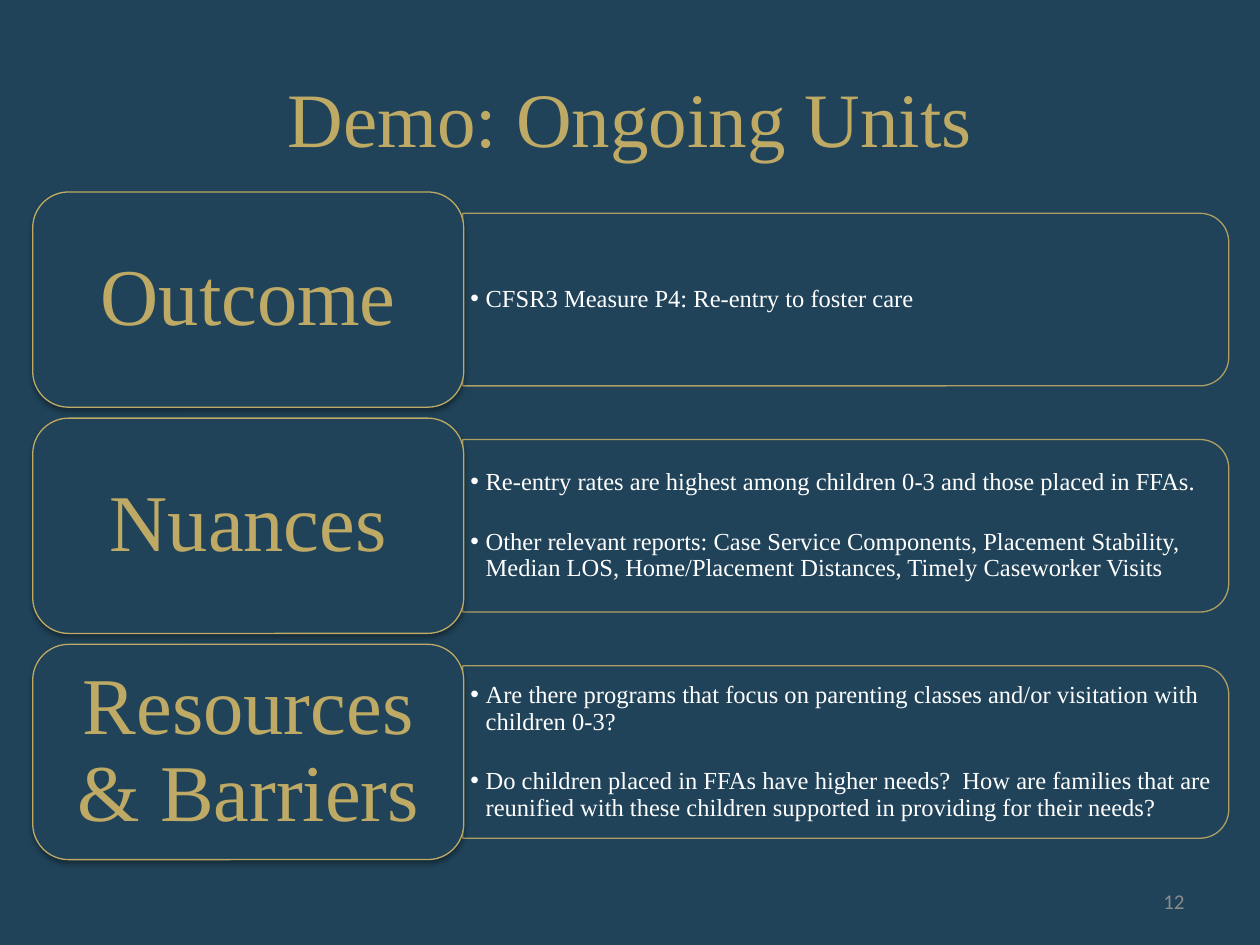
import pptx
import pptx.util
import pptx.dml.color
import pptx.enum.shapes
import pptx.enum.text
import pptx.oxml
import pptx.oxml.ns
from lxml import etree

Cm, Pt = pptx.util.Cm, pptx.util.Pt
SHAPE = pptx.enum.shapes.MSO_SHAPE
ALIGN = pptx.enum.text.PP_ALIGN
qn = pptx.oxml.ns.qn
NAVY, GOLD, WHITE, GREY = "204359", "BEAA64", "FFFFFF", "8C8C8C"
SERIF = "Times New Roman"


def paint(fill, color):
    fill.solid()
    fill.fore_color.rgb = pptx.dml.color.RGBColor.from_string(color)


def write(sp, *texts, size, color, font=SERIF, align=ALIGN.LEFT,
          inset=(0.25, 0.13), spacing=1.0, gap=0, bullet=False):
    tf = sp.text_frame
    tf.word_wrap = True
    tf.auto_size = pptx.enum.text.MSO_AUTO_SIZE.NONE
    tf.vertical_anchor = pptx.enum.text.MSO_ANCHOR.MIDDLE
    tf.margin_left = tf.margin_right = Cm(inset[0])
    tf.margin_top = tf.margin_bottom = Cm(inset[1])
    for i, text in enumerate(texts):
        p = tf.add_paragraph() if i else tf.paragraphs[0]
        p.alignment = align
        p.line_spacing = spacing
        p.space_before = Pt(gap if i else 0)
        p.space_after = Pt(0)
        if bullet:
            p.level = 1
            pPr = p._p.get_or_add_pPr()
            pPr.set("marL", str(Cm(0.31)))
            pPr.set("indent", str(-Cm(0.31)))
            etree.SubElement(pPr, qn("a:buChar"), char="•")
        r = p.add_run()
        r.text = text
        r.font.size = Pt(size)
        r.font.name = font
        r.font.bold = False
        paint(r.font.fill, color)


prs = pptx.Presentation()
prs.slide_width, prs.slide_height = Cm(25.4), Cm(19.05)
s = prs.slides.add_slide(prs.slide_layouts[4])
paint(s.background.fill, NAVY)

# Title
title, *bodies = s.placeholders
title.left, title.top, title.width, title.height = Cm(1.27), Cm(0.76), Cm(22.86), Cm(3.18)
write(title, "Demo: Ongoing Units", size=44, color=GOLD, align=ALIGN.CENTER)

# Slide number
number = s.shapes.add_textbox(Cm(18.21), Cm(17.65), Cm(5.92), Cm(1.02))
write(number, "12", size=12, color=GREY, font="Calibri", align=ALIGN.RIGHT)

# Rows: label, opacity of the panel in percent, list items
rows = [
    ("Outcome", 17, ["CFSR3 Measure P4: Re-entry to foster care"]),
    ("Nuances", 23, [
        "Re-entry rates are highest among children 0-3 and those placed in FFAs.",
        "Other relevant reports: Case Service Components, Placement Stability, "
        "Median LOS, Home/Placement Distances, Timely Caseworker Visits"]),
    ("Resources & Barriers", 19, [
        "Are there programs that focus on parenting classes and/or visitation "
        "with children 0-3?",
        "Do children placed in FFAs have higher needs?  How are families that are "
        "reunified with these children supported in providing for their needs?"]),
]
top, pitch = 3.87, 4.56
label_left, label_w, label_h = 0.66, 8.69, 4.34
panel_left, panel_w, panel_h = 9.33, 15.44, 3.48
body_w, body_h = 15.26, 3.14

for i, (name, opacity, items) in enumerate(rows):
    y = top + i * pitch
    middle = y + label_h / 2

    # Panel, turned so that its rounded end points right
    panel = s.shapes.add_shape(
        SHAPE.ROUND_2_SAME_RECTANGLE,
        Cm(panel_left + (panel_w - panel_h) / 2), Cm(middle - panel_w / 2),
        Cm(panel_h), Cm(panel_w))
    panel.rotation = 90

    # Label
    label = s.shapes.add_shape(SHAPE.ROUNDED_RECTANGLE, Cm(label_left), Cm(y),
                               Cm(label_w), Cm(label_h))
    write(label, name, size=46, color=GOLD, align=ALIGN.CENTER,
          inset=(0.48, 0.25), spacing=0.9)

    for sp in (panel, label):
        sp.shadow.inherit = False
        paint(sp.fill, NAVY)
        paint(sp.line.fill, GOLD)
        sp.line.width = Pt(0.75)

    # Transparency of the panel's fill and line
    for clr, alpha in zip(panel.element.spPr.iter(qn("a:srgbClr")), (opacity, 90)):
        etree.SubElement(clr, qn("a:alpha"), val=str(alpha * 1000))

    # Soft shadow below the label
    effects = label.element.spPr.find(qn("a:effectLst"))
    shadow = etree.SubElement(effects, qn("a:outerShdw"), blurRad=str(Pt(3.1)),
                              dist=str(Pt(1.8)), dir="5400000", rotWithShape="0")
    clr = etree.SubElement(shadow, qn("a:srgbClr"), val="000000")
    etree.SubElement(clr, qn("a:alpha"), val="35000")

    # List, brought in front of its panel
    body = bodies[i]
    body.left, body.top = Cm(panel_left), Cm(middle - body_h / 2)
    body.width, body.height = Cm(body_w), Cm(body_h)
    write(body, *items, size=14, color=WHITE, inset=(0.15, 0.08),
          spacing=0.9, gap=19, bullet=True)
    s.shapes.element.append(body.element)

# Unused placeholder
spare = bodies[-1].element
spare.getparent().remove(spare)

prs.save("out.pptx")
